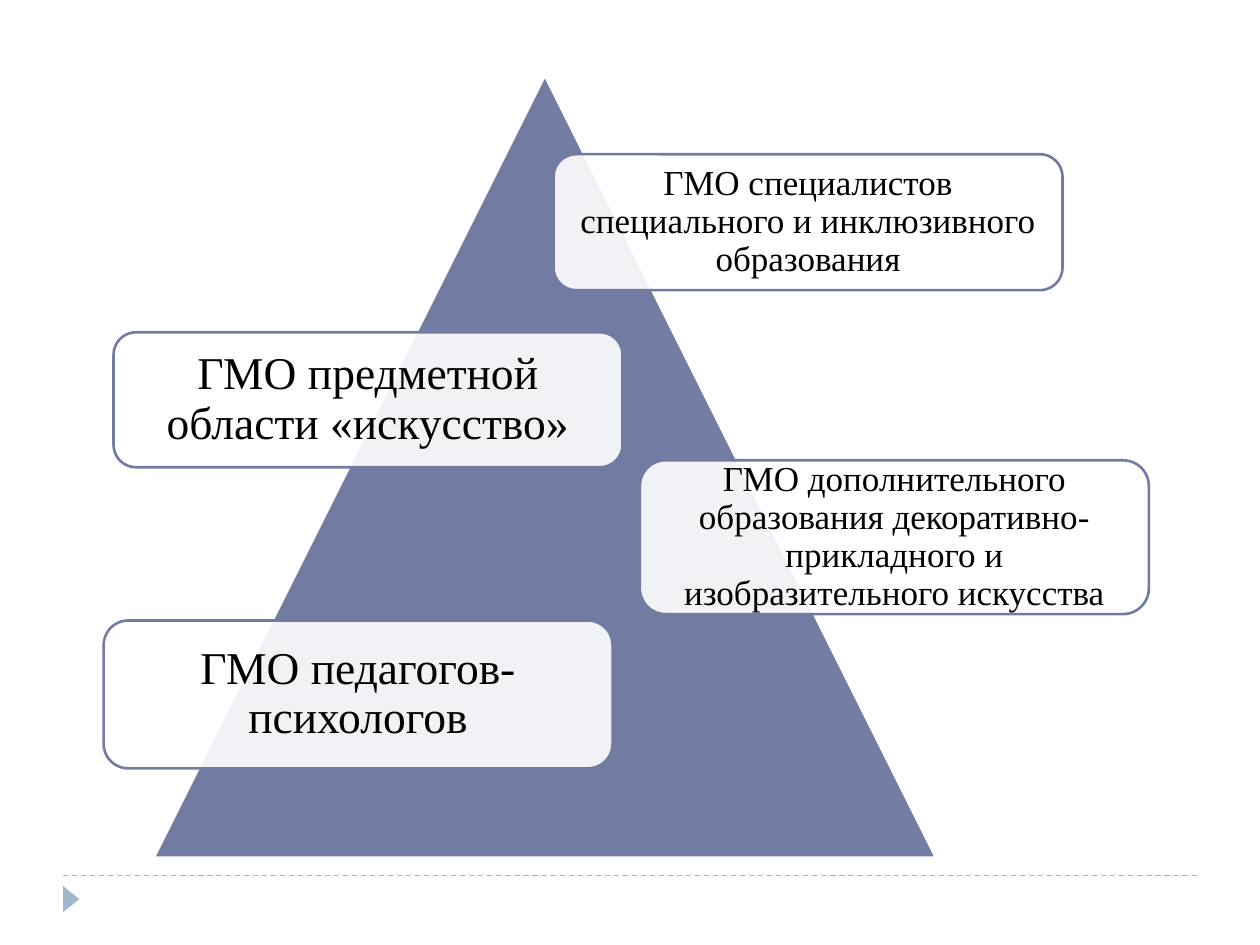
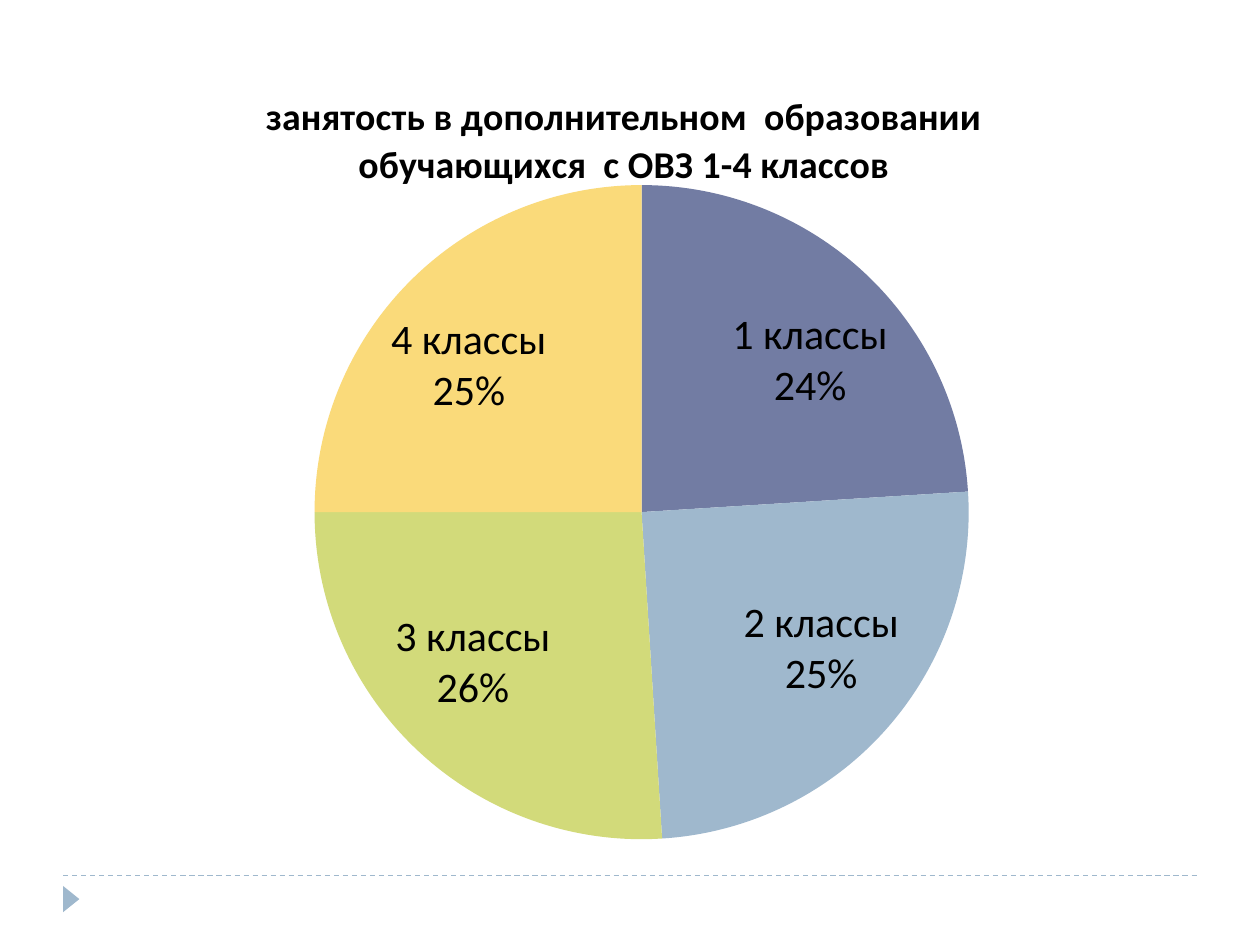
from lxml.etree import SubElement
from pptx import Presentation
from pptx.chart.data import CategoryChartData
from pptx.dml.color import RGBColor
from pptx.enum.chart import XL_CHART_TYPE as ChartType, XL_LABEL_POSITION as LabelPosition
from pptx.enum.dml import MSO_LINE_DASH_STYLE as Dash
from pptx.enum.shapes import MSO_CONNECTOR as Connector, MSO_SHAPE as Shape
from pptx.enum.text import MSO_ANCHOR as Anchor, PP_ALIGN as Align
from pptx.oxml import parse_xml
from pptx.oxml.ns import nsdecls, qn
from pptx.util import Cm, Pt

COLORS = {
    "indigo": "727CA3",
    "blue": "9FB8CD",
    "green": "D2DA7A",
    "yellow": "FADA7A",
    "white": "FFFFFF",
    "black": "000000",
}
CARD_WIDTH = 10.26
ASSOCIATIONS = [
    (9.05, 1.59, 2.74, 20, "ГМО специалистов специального и инклюзивного образования"),
    (10.79, 7.76, 3.1, 20,
     "ГМО дополнительного образования декоративно-прикладного и изобразительного искусства"),
    (0.18, 5.18, 2.72, 26, "ГМО предметной области «искусство»"),
    (-0.02, 10.99, 2.98, 26, "ГМО педагогов-психологов"),
]
ENROLMENT_TITLE = "занятость в дополнительном  образовании обучающихся  с ОВЗ 1-4 классов"
ENROLMENT = {"1 классы": 24, "2 классы": 25, "3 классы": 26, "4 классы": 25}
SLICE_COLORS = ["indigo", "blue", "green", "yellow"]


def rgb(name):
    return RGBColor.from_string(COLORS[name])


def style_font(font, face, size, bold=False):
    font.name, font.size, font.bold = face, Pt(size), bold
    font.color.rgb = rgb("black")


def add_filled(slide, preset, left, top, width, height, fill):
    shape = slide.shapes.add_shape(preset, Cm(left), Cm(top), Cm(width), Cm(height))
    shape.shadow.inherit = False
    shape.fill.solid()
    shape.fill.fore_color.rgb = rgb(fill)
    shape.line.fill.background()
    return shape


def add_footer(slide, left, top, width):
    rule = slide.shapes.add_connector(
        Connector.STRAIGHT, Cm(left), Cm(top), Cm(left + width), Cm(top))
    rule.line.color.rgb = rgb("blue")
    rule.line.width = Pt(0.75)
    rule.line.dash_style = Dash.DASH
    SubElement(rule._element.spPr, qn("a:effectLst"))
    marker = add_filled(slide, Shape.ISOSCELES_TRIANGLE,
                        left - 0.1, top + 0.31, 0.53, 0.33, "blue")
    marker.rotation = 90


def add_card(slide, left, top, height, size, label):
    card = add_filled(slide, Shape.ROUNDED_RECTANGLE,
                      left, top, CARD_WIDTH, height, "white")
    tint = card._element.spPr.find(qn("a:solidFill"))[0]
    SubElement(tint, qn("a:alpha"), val="90000")
    card.line.color.rgb = rgb("indigo")
    card.line.width = Pt(1.5)
    frame = card.text_frame
    frame.word_wrap = True
    frame.vertical_anchor = Anchor.MIDDLE
    inset = Cm(0.34 if size == 20 else 0.41)
    frame.margin_left = frame.margin_right = inset
    frame.margin_top = frame.margin_bottom = inset
    paragraph = frame.paragraphs[0]
    paragraph.alignment = Align.CENTER
    paragraph.line_spacing = 0.9
    run = paragraph.add_run()
    run.text = label
    style_font(run.font, "Times New Roman", size)


def add_pyramid(slide, left, top, side):
    pyramid = add_filled(slide, Shape.ISOSCELES_TRIANGLE,
                         left + 0.99, top, side, side, "indigo")
    pyramid.line.color.rgb = rgb("white")
    pyramid.line.width = Pt(1.5)
    for dx, dy, height, size, label in ASSOCIATIONS:
        add_card(slide, left + dx, top + dy, height, size, label)


def set_plot_layout(plot_area, **fractions):
    old = plot_area.find(qn("c:layout"))
    if old is not None:
        plot_area.remove(old)
    values = "".join(f'<c:{key} val="{value}"/>' for key, value in fractions.items())
    plot_area.insert(0, parse_xml(
        f'<c:layout {nsdecls("c")}><c:manualLayout><c:layoutTarget val="inner"/>'
        f'<c:xMode val="edge"/><c:yMode val="edge"/>{values}'
        '</c:manualLayout></c:layout>'))


def add_enrolment_pie(slide, left, top, width, height):
    data = CategoryChartData()
    data.categories = list(ENROLMENT)
    data.add_series("Series 1", list(ENROLMENT.values()))
    chart = slide.shapes.add_chart(
        ChartType.PIE, Cm(left), Cm(top), Cm(width), Cm(height), data).chart
    style_font(chart.font, "Calibri", 18)
    chart.has_legend = False
    chart.has_title = True
    heading = chart.chart_title.text_frame.paragraphs[0].add_run()
    heading.text = ENROLMENT_TITLE
    style_font(heading.font, "Calibri", 21.6, bold=True)
    pie = chart.plots[0]
    pie.vary_by_categories = True
    set_plot_layout(chart._chartSpace.chart.plotArea, x=0.23, y=0.16, w=0.57, h=0.84)
    for index, color in enumerate(SLICE_COLORS):
        fill = pie.series[0].points[index].format.fill
        fill.solid()
        fill.fore_color.rgb = rgb(color)
    pie.has_data_labels = True
    labels = pie.data_labels
    labels.show_category_name = labels.show_percentage = True
    labels.show_value = False
    labels.number_format = "0%"
    labels.number_format_is_linked = False
    labels.position = LabelPosition.BEST_FIT
    style_font(labels.font, "Calibri", 24)
    separator = parse_xml(f'<c:separator {nsdecls("c")}>\n</c:separator>')
    labels._element.find(qn("c:showBubbleSize")).addnext(separator)


def main():
    deck = Presentation()
    deck.slide_width, deck.slide_height = Cm(25.4), Cm(19.05)
    regions = [
        (add_pyramid, (2.11, 1.52, 15.77)),
        (add_enrolment_pie, (0.89, 1.22, 23.39, 15.7)),
    ]
    for add_region, box in regions:
        slide = deck.slides.add_slide(deck.slide_layouts[6])
        add_footer(slide, 1.27, 17.65, 22.86)
        add_region(slide, *box)
    deck.save("out.pptx")


if __name__ == "__main__":
    main()
